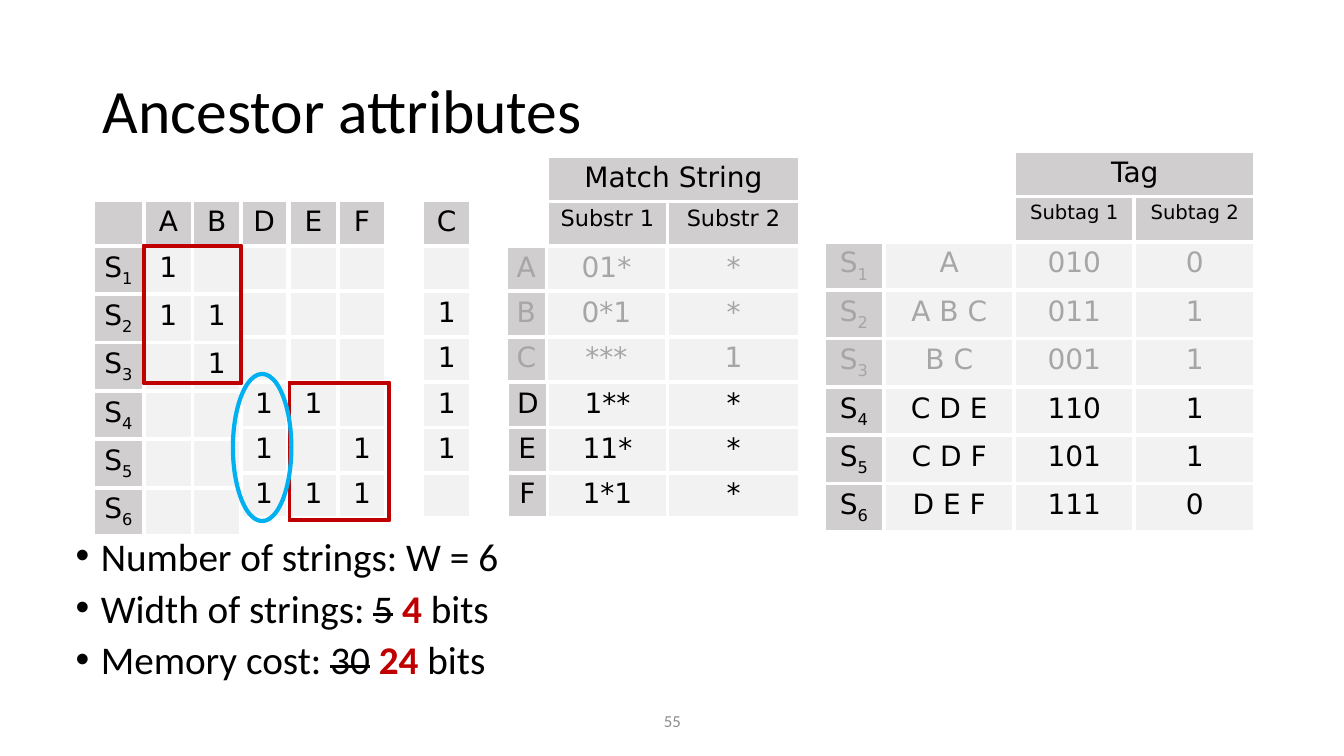
"""Build the slide on ancestor attributes."""
from dataclasses import dataclass

import pptx
import pptx.dml.color
import pptx.enum.shapes
import pptx.enum.text
import pptx.oxml
import pptx.oxml.ns
import pptx.util
from pptx.util import Inches

SHAPES = pptx.enum.shapes.MSO_SHAPE
ALIGN = pptx.enum.text.PP_ALIGN
ANCHOR = pptx.enum.text.MSO_ANCHOR


@dataclass(frozen=True)
class Theme:
    """Colours, fonts and type sizes of the slide."""
    ink: str = "000000"
    muted: str = "A6A6A6"
    footer: str = "8C8C8C"
    accent: str = "C00000"
    ring: str = "00B0F0"
    head: str = "D0CECE"
    cell: str = "F2F2F2"
    paper: str = "FFFFFF"
    text_font: str = "Calibri"
    table_font: str = "DejaVu Sans"
    title_size: int = 44
    body_size: int = 28
    table_size: int = 20
    substr_size: int = 16
    subtag_size: int = 14
    footer_size: int = 12


THEME = Theme()
ROW_HEIGHT = 0.45


def rgb(value):
    """Turn a hex string into a colour."""
    return pptx.dml.color.RGBColor.from_string(value)


def add_text(paragraph, text, size=THEME.table_size, color=THEME.ink,
             font=THEME.text_font, bold=False, strike=False, subscript=False):
    """Append a formatted run to a paragraph."""
    run = paragraph.add_run()
    run.text = text
    run.font.size = pptx.util.Pt(size)
    run.font.name = font
    run.font.bold = bold
    run.font.color.rgb = rgb(color)
    properties = run.font._element
    if strike:
        properties.set("strike", "sngStrike")
    if subscript:
        properties.set("baseline", "-25000")


def place(shape, left, top, width, height):
    """Move and resize a shape, in inches."""
    shape.left, shape.top = Inches(left), Inches(top)
    shape.width, shape.height = Inches(width), Inches(height)


def add_borders(cell):
    """Give a cell white borders on its four sides."""
    properties = cell._tc.get_or_add_tcPr()
    for side in ("lnL", "lnR", "lnT", "lnB"):
        properties.append(pptx.oxml.parse_xml(
            f'<a:{side} {pptx.oxml.ns.nsdecls("a")} w="38100"><a:solidFill>'
            f'<a:srgbClr val="{THEME.paper}"/></a:solidFill></a:{side}>'))


def add_grid(slide, left, top, widths, rows, head_sizes=(), head_cols=0,
             muted_rows=(), spans=()):
    """Add a table; None leaves a cell white and "_" starts a subscript."""
    grid = slide.shapes.add_table(
        len(rows), len(widths), Inches(left), Inches(top),
        Inches(sum(widths)), Inches(ROW_HEIGHT * len(rows))).table
    grid.first_row = grid.horz_banding = False
    for column, width in zip(grid.columns, widths):
        column.width = Inches(width)
    for r, row in enumerate(rows):
        grid.rows[r].height = Inches(ROW_HEIGHT)
        is_head = r < len(head_sizes)
        size = head_sizes[r] if is_head else THEME.table_size
        color = THEME.muted if r in muted_rows else THEME.ink
        for c, label in enumerate(row):
            cell = grid.cell(r, c)
            add_borders(cell)
            shade = THEME.head if is_head or c < head_cols else THEME.cell
            cell.fill.solid()
            cell.fill.fore_color.rgb = rgb(THEME.paper if label is None else shade)
            if label:
                paragraph = cell.text_frame.paragraphs[0]
                paragraph.alignment = ALIGN.CENTER
                for part, text in enumerate(label.split("_")):
                    add_text(paragraph, text, size=size, color=color,
                             font=THEME.table_font, subscript=part > 0)
    for row, first, last in spans:
        grid.cell(row, first).merge(grid.cell(row, last))


def add_highlight(slide, kind, box, line, weight, fill=None):
    """Add an outline that marks a group of cells."""
    mark = slide.shapes.add_shape(kind, *map(Inches, box))
    mark.shadow.inherit = False
    mark.line.color.rgb = rgb(line)
    mark.line.width = pptx.util.Pt(weight)
    if fill:
        mark.fill.solid()
        mark.fill.fore_color.rgb = rgb(fill)
        mark.adjustments[0] = 0.021
    else:
        mark.fill.background()


def fill_title(slide, text):
    """Fill the title placeholder."""
    title = slide.shapes.title
    place(title, 0.92, 0.4, 11.5, 1.45)
    title.text_frame.vertical_anchor = ANCHOR.MIDDLE
    paragraph = title.text_frame.paragraphs[0]
    paragraph.alignment = ALIGN.LEFT
    paragraph.line_spacing = 0.9
    add_text(paragraph, text, size=THEME.title_size)


def fill_bullets(slide, items):
    """Fill the body placeholder with bulleted lines of formatted runs."""
    body = slide.placeholders[1]
    place(body, 0.65, 5.32, 8.11, 1.62)
    frame = body.text_frame
    frame.auto_size = pptx.enum.text.MSO_AUTO_SIZE.NONE
    for index, runs in enumerate(items):
        paragraph = frame.add_paragraph() if index else frame.paragraphs[0]
        paragraph.line_spacing = 0.8
        paragraph.space_before = pptx.util.Pt(10)
        properties = paragraph._p.get_or_add_pPr()
        properties.set("marL", str(Inches(0.25)))
        properties.set("indent", str(Inches(-0.25)))
        properties.append(pptx.oxml.parse_xml(
            f'<a:buChar {pptx.oxml.ns.nsdecls("a")} char="•"/>'))
        for text, style in runs:
            add_text(paragraph, text, size=THEME.body_size, **style)


def add_page_number(slide, number):
    """Add the centred page number."""
    box = slide.shapes.add_textbox(*map(Inches, (5.17, 6.95, 3, 0.4)))
    box.text_frame.word_wrap = True
    box.text_frame.vertical_anchor = ANCHOR.MIDDLE
    paragraph = box.text_frame.paragraphs[0]
    paragraph.alignment = ALIGN.CENTER
    add_text(paragraph, number, size=THEME.footer_size, color=THEME.footer)


def main():
    """Compose and save the slide."""
    deck = pptx.Presentation()
    deck.slide_width, deck.slide_height = Inches(13.33), Inches(7.5)
    slide = deck.slides.add_slide(deck.slide_layouts[1])
    fill_title(slide, "Ancestor attributes")
    add_page_number(slide, "55")

    add_grid(slide, 8.17, 1.5, (0.6, 1.29, 1.19, 1.2), [
        (None, None, "Tag", ""),
        (None, None, "Subtag 1", "Subtag 2"),
        ("S_1", "A", "010", "0"),
        ("S_2", "A B C", "011", "1"),
        ("S_3", "B C", "001", "1"),
        ("S_4", "C D E", "110", "1"),
        ("S_5", "C D F", "101", "1"),
        ("S_6", "D E F", "111", "0"),
    ], head_sizes=(THEME.table_size, THEME.subtag_size), head_cols=1,
        muted_rows=(2, 3, 4), spans=[(0, 2, 3)])

    plain, struck = {}, {"strike": True}
    changed = {"color": THEME.accent, "bold": True}
    fill_bullets(slide, [
        [("Number of strings: W = 6", plain)],
        [("Width of strings: ", plain), ("5", struck), (" 4 ", changed), ("bits", plain)],
        [("Memory cost: ", plain), ("30", struck), (" ", plain), ("24 ", changed),
         ("bits", plain)],
    ])

    top, head = 1.99, (THEME.table_size,)
    substr_head = (THEME.substr_size,)
    add_grid(slide, 2.87, top, (0.48, 0.48),
             ["EF", *[("", "")] * 3, ("1", ""), ("", "1"), "11"], head)
    add_grid(slide, 2.38, top, (0.48,), ["D", *[("",)] * 3, "1", "1", "1"], head)
    add_grid(slide, 0.92, top, (0.51, 0.48, 0.48), [
        ("", "A", "B"), ("S_1", "1", ""), ("S_2", "1", "1"), ("S_3", "", "1"),
        *[(f"S_{n}", "", "") for n in (4, 5, 6)],
    ], head, head_cols=1)

    for box in ((1.42, 2.43, 0.98, 1.38), (2.86, 3.79, 1.01, 1.38)):
        add_highlight(slide, SHAPES.FRAME, box, THEME.accent, 1, fill=THEME.accent)
    add_highlight(slide, SHAPES.OVAL, (2.31, 3.71, 0.58, 1.46), THEME.ring, 3)

    add_grid(slide, 4.19, top, (0.48,), ["C", ("",), *"1111", ("",)], head)
    add_grid(slide, 5.03, top, (0.4, 1.19), [
        (None, "Substr 1"), *[("", "")] * 3, ("D", "1**"), ("E", "11*"), ("F", "1*1"),
    ], substr_head, head_cols=1)
    add_grid(slide, 6.62, top, (1.31,), [("Substr 2",), *"**1***"], substr_head,
             muted_rows=(1, 2, 3))
    add_grid(slide, 5.03, 1.55, (0.4, 2.5), [(None, "Match String")], head)
    add_grid(slide, 5.02, 2.44, (0.4, 1.19), [("A", "01*"), ("B", "0*1"), ("C", "***")],
             head_cols=1, muted_rows=(0, 1, 2))
    deck.save("out.pptx")


if __name__ == "__main__":
    main()
